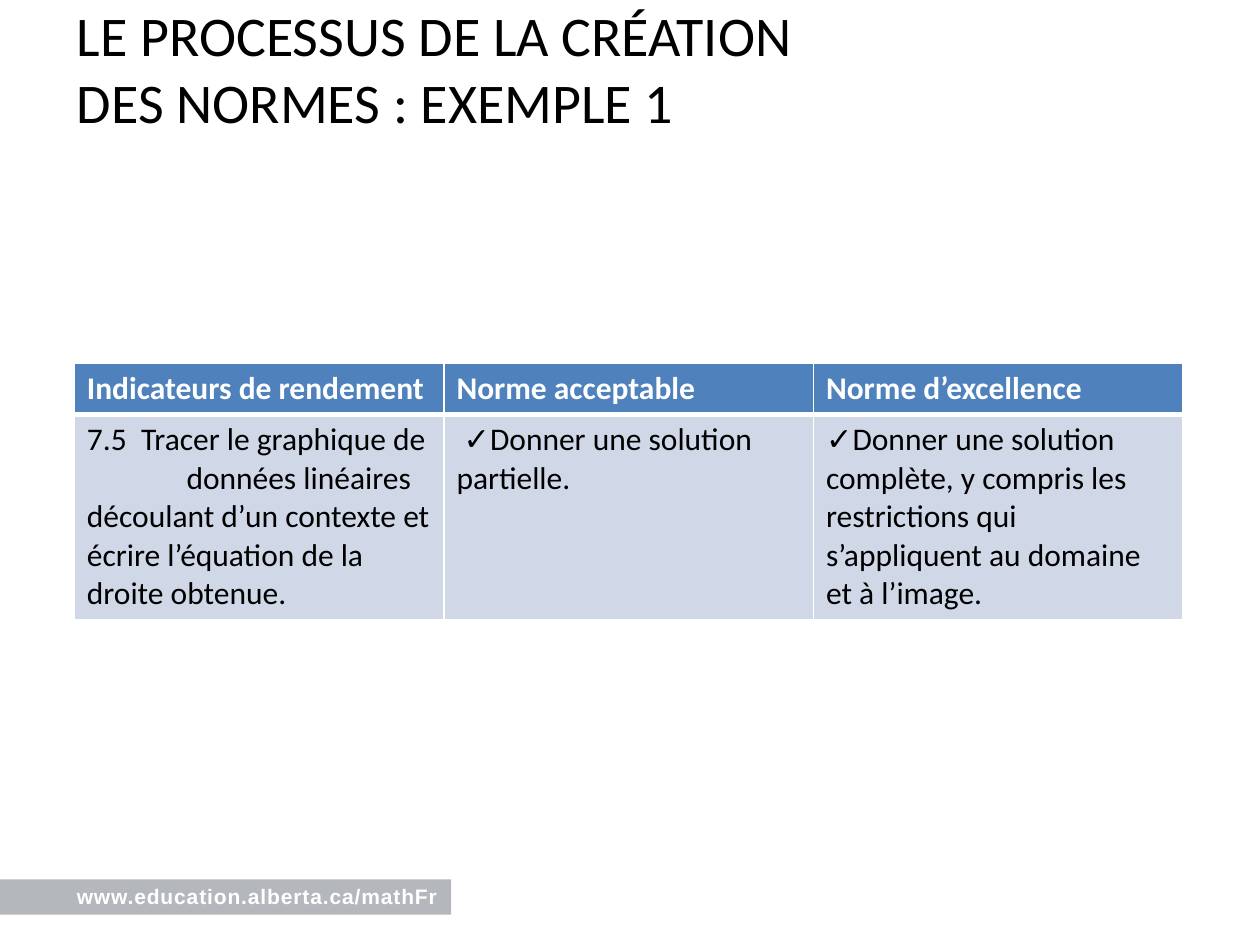
from dataclasses import dataclass

from lxml import etree
from pptx import Presentation
from pptx.dml.color import RGBColor
from pptx.enum.shapes import MSO_SHAPE
from pptx.enum.text import MSO_ANCHOR, MSO_AUTO_SIZE, PP_ALIGN
from pptx.oxml.ns import qn
from pptx.util import Inches, Pt

RECTANGLE = MSO_SHAPE.RECTANGLE
TOP = MSO_ANCHOR.TOP
LEFT = PP_ALIGN.LEFT
NO_AUTOFIT = MSO_AUTO_SIZE.NONE

HEADINGS = ["Indicateurs de rendement", "Norme acceptable", "Norme d’excellence"]
STANDARDS = [
    "7.5  Tracer le graphique de\v\tdonnées linéaires découlant d’un contexte "
    "et écrire l’équation de la droite obtenue.",
    " ✓Donner une solution partielle.",
    "✓Donner une solution complète, y compris les restrictions qui "
    "s’appliquent au domaine et à l’image.",
]


@dataclass(frozen=True)
class Theme:
    """Colours, fonts and type sizes of the slide."""

    text: str = "000000"
    light: str = "FFFFFF"
    header: str = "4F81BD"
    body: str = "D0D8E8"
    footer: str = "6A737B"
    main_font: str = "Calibri"
    footer_font: str = "Arial"
    title_size: int = 32
    table_size: int = 18
    footer_size: int = 12


class SlideBuilder:
    """Draws styled elements on the current slide."""

    def __init__(self, slide, theme):
        self.slide = slide
        self.theme = theme

    def style_runs(self, frame, font, size, color, bold=False):
        """Format every run of a text frame."""
        for paragraph in frame.paragraphs:
            paragraph.alignment = LEFT
            for run in paragraph.runs:
                run.font.name = font
                run.font.size = Pt(size)
                run.font.bold = bold
                run.font.color.rgb = RGBColor.from_string(color)

    def plain_frame(self, shape, text):
        """Fill a shape with top-anchored text without margins."""
        frame = shape.text_frame
        frame.text = text
        frame.word_wrap = True
        frame.auto_size = NO_AUTOFIT
        frame.vertical_anchor = TOP
        frame.margin_left = frame.margin_right = 0
        frame.margin_top = frame.margin_bottom = 0
        return frame

    def title(self, text, left, top, width, height):
        """Place the slide title."""
        heading = self.slide.shapes.title
        heading.left, heading.top = Inches(left), Inches(top)
        heading.width, heading.height = Inches(width), Inches(height)
        frame = self.plain_frame(heading, text)
        self.style_runs(frame, self.theme.main_font, self.theme.title_size, self.theme.text)

    def band(self, left, top, width, height, color, opacity):
        """Draw a translucent rectangle."""
        band = self.slide.shapes.add_shape(
            RECTANGLE, Inches(left), Inches(top), Inches(width), Inches(height)
        )
        band.shadow.inherit = False
        band.fill.solid()
        band.fill.fore_color.rgb = RGBColor.from_string(color)
        band.line.fill.background()
        tint = band.fill._xPr.find(qn("a:solidFill"))[0]
        etree.SubElement(tint, qn("a:alpha"), val=str(opacity * 1000))

    def footer(self, text, left, top, width, height):
        """Write the letter-spaced footer address."""
        address = self.slide.shapes.add_textbox(
            Inches(left), Inches(top), Inches(width), Inches(height)
        )
        frame = self.plain_frame(address, text)
        theme = self.theme
        self.style_runs(frame, theme.footer_font, theme.footer_size, theme.light, True)
        frame.paragraphs[0].runs[0].font._element.set("spc", "50")

    def borders(self, cell, top, bottom):
        """Give a cell light borders with the given top and bottom weights."""
        properties = cell._tc.get_or_add_tcPr()
        for side, weight in (("L", 1), ("R", 1), ("T", top), ("B", bottom)):
            line = etree.SubElement(properties, qn(f"a:ln{side}"), w=str(Pt(weight)))
            fill = etree.SubElement(line, qn("a:solidFill"))
            etree.SubElement(fill, qn("a:srgbClr"), val=self.theme.light)

    def cell(self, cell, text, is_header):
        """Fill and format one table cell."""
        theme = self.theme
        cell.text = text
        self.borders(cell, 1 if is_header else 3, 3 if is_header else 1)
        cell.fill.solid()
        cell.fill.fore_color.rgb = RGBColor.from_string(
            theme.header if is_header else theme.body
        )
        if "\t" in text:
            properties = cell.text_frame.paragraphs[0]._p.get_or_add_pPr()
            tabs = etree.SubElement(properties, qn("a:tabLst"))
            etree.SubElement(tabs, qn("a:tab"), pos=str(Inches(0.79)), algn="l")
        color = theme.light if is_header else theme.text
        self.style_runs(cell.text_frame, theme.main_font, theme.table_size, color, is_header)

    def table(self, rows, left, top, width, heights):
        """Draw a table with equal columns and a header row."""
        columns = len(rows[0])
        grid = self.slide.shapes.add_table(
            len(rows), columns, Inches(left), Inches(top),
            Inches(width), Inches(sum(heights)),
        ).table
        for column in grid.columns:
            column.width = Inches(width / columns)
        for index, (texts, height) in enumerate(zip(rows, heights)):
            grid.rows[index].height = Inches(height)
            for position, text in enumerate(texts):
                self.cell(grid.cell(index, position), text, index == 0)


def main():
    """Build and save the slide."""
    presentation = Presentation()
    presentation.slide_width = Inches(10)
    presentation.slide_height = Inches(7.5)
    theme = Theme()
    slide = presentation.slides.add_slide(presentation.slide_layouts[5])
    builder = SlideBuilder(slide, theme)
    builder.band(0, 6.98, 3.58, 0.28, theme.footer, 50)
    builder.footer("www.education.alberta.ca/mathFr", 0.61, 7.01, 2.97, 0.2)
    builder.title("LE PROCESSUS DE LA CRÉATION DES NORMES : EXEMPLE 1", 0.61, 0, 6.46, 1.15)
    builder.table([HEADINGS, STANDARDS], 0.59, 2.88, 8.8, [0.41, 1.62])
    presentation.save("out.pptx")


if __name__ == "__main__":
    main()
